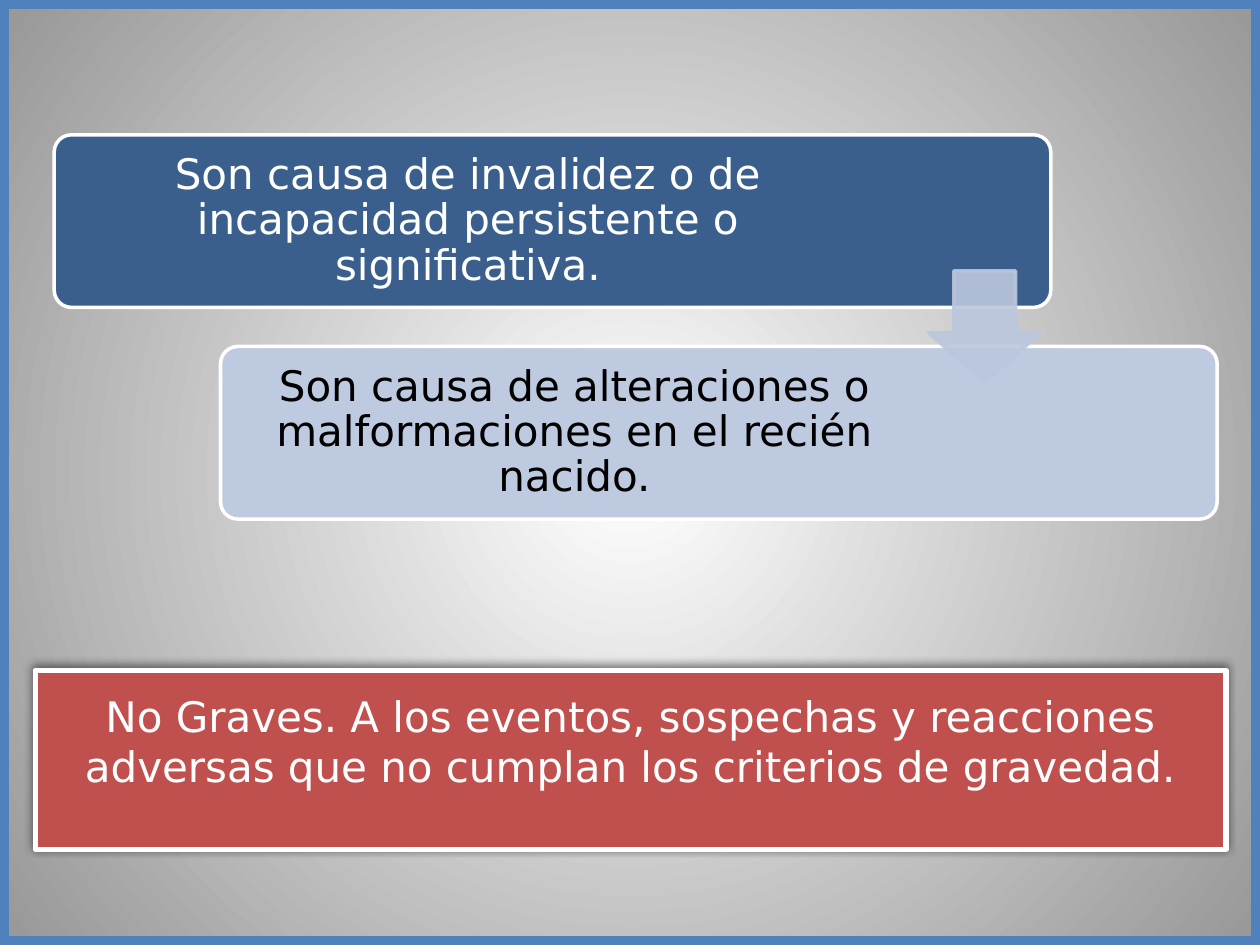
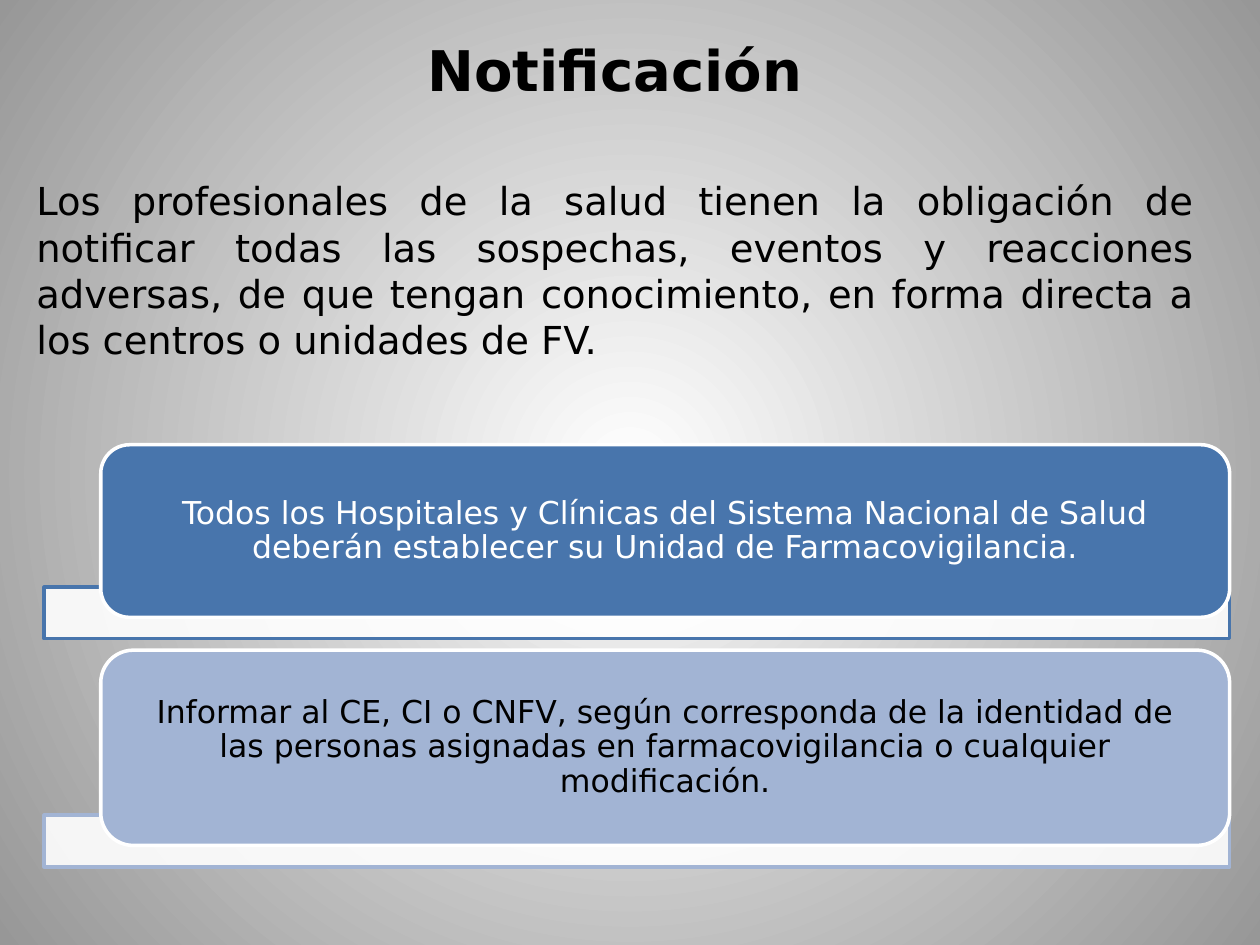
from lxml import etree
from pptx import Presentation
from pptx.dml.color import RGBColor
from pptx.enum.shapes import MSO_SHAPE
from pptx.enum.text import MSO_ANCHOR, MSO_AUTO_SIZE, PP_ALIGN
from pptx.oxml.ns import qn
from pptx.util import Inches, Pt

FONT = "DejaVu Sans"
WHITE = RGBColor(0xFF, 0xFF, 0xFF)
BLACK = RGBColor(0x00, 0x00, 0x00)
GREY = RGBColor(0x97, 0x97, 0x97)
NAVY = RGBColor(0x3A, 0x5F, 0x8C)
PALE_BLUE = RGBColor(0xBE, 0xCA, 0xDF)
ARROW_BLUE = RGBColor(0xBB, 0xC7, 0xDE)
RED = RGBColor(0xC0, 0x50, 0x4D)
FRAME_BLUE = RGBColor(0x4F, 0x81, 0xBD)
MID_BLUE = RGBColor(0x48, 0x75, 0xAC)
LIGHT_BLUE = RGBColor(0xA2, 0xB4, 0xD4)

TITLE_ONLY, BLANK = 5, 6
CARD_SPACING = {"line_spacing": 0.9}


def apply(target, values):
    for name, value in values.items():
        setattr(target, name, value)


def add_page(deck, layout):
    """Add a slide with the radial white-to-grey background."""
    page = deck.slides.add_slide(deck.slide_layouts[layout])
    fill = page.background.fill
    fill.gradient()
    for stop, color in zip(fill.gradient_stops, (WHITE, GREY)):
        stop.color.rgb = color
    linear = next(page.background._cSld.iter(qn("a:lin")))
    gradient = linear.getparent()
    gradient.remove(linear)
    path = etree.SubElement(gradient, qn("a:path"), path="circle")
    etree.SubElement(path, qn("a:fillToRect"), l="50000", t="50000", r="50000", b="50000")
    return page


def write(box, text, size, color, align=PP_ALIGN.CENTER, bold=False,
          anchor=MSO_ANCHOR.MIDDLE, margins=(0.1, 0.05, 0.1, 0.05), spacing=None):
    """Fill a box with one paragraph; margins are left, top, right, bottom."""
    frame = box.text_frame
    sides = ("margin_left", "margin_top", "margin_right", "margin_bottom")
    apply(frame, {"word_wrap": True, "auto_size": MSO_AUTO_SIZE.NONE, "vertical_anchor": anchor})
    apply(frame, {side: Inches(margin) for side, margin in zip(sides, margins)})
    para = frame.paragraphs[0]
    apply(para, {"alignment": align, **(spacing or {})})
    span = para.add_run()
    span.text = text
    apply(span.font, {"name": FONT, "size": Pt(size), "bold": bold})
    span.font.color.rgb = color


def set_opacity(shape, part, percent):
    """Make the fill or line colour of a shape partly transparent."""
    color = shape._element.spPr.find(part + qn("a:solidFill") + "/" + qn("a:srgbClr"))
    etree.SubElement(color, qn("a:alpha"), val=str(percent * 1000))


def add_block(page, kind, place, fill, line, weight, adjustments=()):
    shape = page.shapes.add_shape(kind, *map(Inches, place))
    shape.shadow.inherit = False
    if fill is None:
        shape.fill.background()
    else:
        shape.fill.solid()
        shape.fill.fore_color.rgb = fill
    shape.line.color.rgb = line
    shape.line.width = Pt(weight)
    for index, value in enumerate(adjustments):
        shape.adjustments[index] = value
    return shape


def add_card(page, place, fill, text, size, color, margins, adjustments=()):
    card = add_block(page, MSO_SHAPE.ROUNDED_RECTANGLE, place, fill, WHITE, 2, adjustments)
    spacing = {**CARD_SPACING, "space_after": Pt(round(size * 0.35, 1))}
    write(card, text, size, color, margins=margins, spacing=spacing)


def add_arrow(page, place):
    arrow = add_block(page, MSO_SHAPE.DOWN_ARROW, place, ARROW_BLUE, ARROW_BLUE, 2, (0.55, 0.45))
    set_opacity(arrow, "", 90)
    set_opacity(arrow, qn("a:ln") + "/", 90)


def add_strip(page, top, color):
    strip = add_block(page, MSO_SHAPE.RECTANGLE, (0.35, top, 9.41, 0.41), WHITE, color, 2)
    set_opacity(strip, "", 90)


def add_soft_shadow(shape):
    effects = shape._element.spPr.find(qn("a:effectLst"))
    shadow = etree.SubElement(effects, qn("a:outerShdw"), blurRad=str(Pt(5)), dist=str(Pt(2)),
                              dir=str(245 * 60000), rotWithShape="0")
    color = etree.SubElement(shadow, qn("a:srgbClr"), val=str(BLACK))
    etree.SubElement(color, qn("a:alpha"), val="50000")


def add_severity_page(deck):
    page = add_page(deck, BLANK)
    add_card(page, (0.43, 1.07, 7.91, 1.37), NAVY,
             "Son causa de invalidez o de incapacidad persistente o significativa.",
             24, WHITE, (0.1, 0.1, 1.44, 0.1), (0.1,))
    add_card(page, (1.75, 2.75, 7.91, 1.37), PALE_BLUE,
             "Son causa de alteraciones o malformaciones en el recién nacido.",
             24, BLACK, (0.1, 0.1, 2.39, 0.1), (0.1,))
    add_arrow(page, (7.37, 2.15, 0.89, 0.89))
    banner = add_block(page, MSO_SHAPE.RECTANGLE, (0.28, 5.32, 9.45, 1.42), RED, WHITE, 3)
    add_soft_shadow(banner)
    write(banner, "No Graves. A los eventos, sospechas y reacciones adversas que no cumplan "
          "los criterios de gravedad.", 24, WHITE, margins=(0.1, 0.05, 0.1, 0.35))
    add_block(page, MSO_SHAPE.RECTANGLE, (0, 0, 10, 7.5), None, FRAME_BLUE, 10)


def add_notification_page(deck):
    page = add_page(deck, TITLE_ONLY)
    title = page.shapes.title
    places = ("left", "top", "width", "height")
    apply(title, dict(zip(places, map(Inches, (0.19, 0.23, 9.38, 0.7)))))
    write(title, "Notificación", 32, BLACK, bold=True, anchor=MSO_ANCHOR.TOP)
    duty = page.shapes.add_textbox(*map(Inches, (0.19, 1.36, 9.38, 1.6)))
    write(duty, "Los profesionales de la salud tienen la obligación de notificar todas las "
          "sospechas, eventos y reacciones adversas, de que tengan conocimiento, en forma "
          "directa a los centros o unidades de FV.", 22, BLACK,
          align=PP_ALIGN.JUSTIFY, anchor=MSO_ANCHOR.TOP)
    tasks = (
        (3.53, 1.37, MID_BLUE, WHITE,
         "Todos los Hospitales y Clínicas del Sistema Nacional de Salud deberán establecer "
         "su Unidad de Farmacovigilancia."),
        (5.16, 1.55, LIGHT_BLUE, BLACK,
         "Informar al CE, CI o CNFV, según corresponda de la identidad de las personas "
         "asignadas en farmacovigilancia o cualquier modificación."),
    )
    for top, height, color, text_color, text in tasks:
        add_strip(page, top + height - 0.24, color)
        add_card(page, (0.8, top, 8.96, height), color, text, 18, text_color, (0.25, 0, 0.25, 0))


def main():
    deck = Presentation()
    deck.slide_width, deck.slide_height = Inches(10), Inches(7.5)
    add_severity_page(deck)
    add_notification_page(deck)
    deck.save("out.pptx")


if __name__ == "__main__":
    main()
